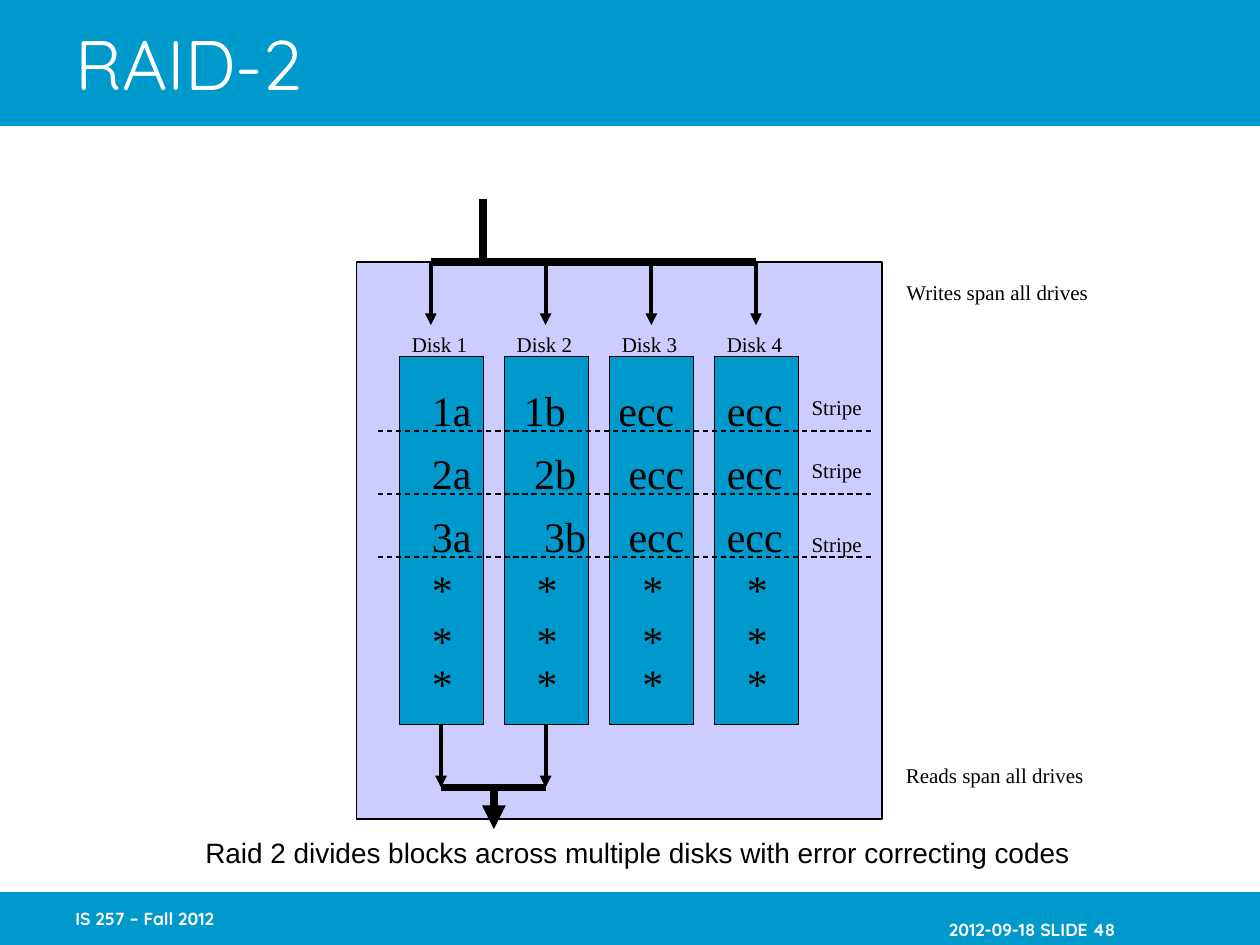
from pptx import Presentation
from pptx.dml.color import RGBColor
from pptx.enum.dml import MSO_LINE
from pptx.enum.shapes import MSO_CONNECTOR, MSO_SHAPE
from pptx.enum.text import MSO_ANCHOR, PP_ALIGN
from pptx.oxml.ns import qn
from pptx.util import Inches, Pt
from lxml.etree import SubElement

BLUE, LILAC, BLACK, WHITE = "0099CC", "CCCCFF", "000000", "FFFFFF"
SERIF, BRAND_FONT = "Times New Roman", "Quicksand"
DISK_LEFT, DISK_PITCH = 3.17, 2.5 / 3
DATA_ROWS = [
    (3, ["1a", "1b", "ecc", "ecc"], [0.73, 1.48, 2.34]),
    (3.5, ["2a", "2b", "ecc", "ecc"], [0.81, 1.56, 2.34]),
    (4, ["3a", "3b", "ecc", "ecc"], [0.89, 1.56, 2.34]),
] + [(top, ["*"] * 4, [0.83, 1.67, 2.5]) for top in (4.42, 4.83, 5.17)]


def color(value):
    """Turn a hex string into a colour."""
    return RGBColor.from_string(value)


def style_text(frame, size, font, shade, bold=False):
    """Format every run of a text frame."""
    for para in frame.paragraphs:
        for span in para.runs:
            span.font.size = Pt(size)
            span.font.name = font
            span.font.bold = bold
            span.font.color.rgb = color(shade)


def add_block(page, left, top, width, height, fill, outlined=True):
    """Add a filled rectangle, with a thin black outline if wanted."""
    block = page.shapes.add_shape(
        MSO_SHAPE.RECTANGLE, Inches(left), Inches(top), Inches(width), Inches(height))
    block.shadow.inherit = False
    block.fill.solid()
    block.fill.fore_color.rgb = color(fill)
    if outlined:
        block.line.color.rgb = color(BLACK)
        block.line.width = Pt(0.75)
    else:
        block.line.fill.background()


def add_line(page, start, end, width, arrow=False, dashed=False):
    """Add a straight black line, optionally dashed or with an arrowhead."""
    line = page.shapes.add_connector(
        MSO_CONNECTOR.STRAIGHT, *(Inches(value) for value in start + end))
    line.line.color.rgb = color(BLACK)
    line.line.width = Pt(width)
    if dashed:
        line.line.dash_style = MSO_LINE.DASH
    if arrow:
        SubElement(line.line._get_or_add_ln(), qn("a:tailEnd"), type="triangle")
    SubElement(line._element.spPr, qn("a:effectLst"))


def add_text(page, left, top, width, height, text, size=12, font=SERIF,
             shade=BLACK, align=PP_ALIGN.LEFT, bold=False, wrap=False):
    """Add a one-line text box and return its text frame."""
    box = page.shapes.add_textbox(
        Inches(left), Inches(top), Inches(width), Inches(height))
    frame = box.text_frame
    frame.word_wrap = wrap
    frame.text = text
    frame.paragraphs[0].alignment = align
    style_text(frame, size, font, shade, bold)
    return frame


def add_data_row(page, top, cells, stops):
    """Add one row of block names, spread over the disks by tab stops."""
    frame = add_text(page, 3.33, top, 2.99, 0.5, "\t".join(cells), 24, wrap=True)
    tabs = SubElement(frame.paragraphs[0]._p.get_or_add_pPr(), qn("a:tabLst"))
    for stop in stops:
        SubElement(tabs, qn("a:tab"), pos=str(Inches(stop)), algn="l")


def add_footer(page, left, text, align, top_inset=0.05, right_inset=0):
    """Add a bold white text on the bottom band."""
    frame = add_text(page, left, 7.08, 2.08, 0.42, text, 10, BRAND_FONT,
                     WHITE, align, bold=True, wrap=True)
    frame.vertical_anchor = MSO_ANCHOR.MIDDLE
    frame.margin_top = Inches(top_inset)
    frame.margin_right = Inches(right_inset)


def add_title(page, text):
    """Fill the title placeholder and bring it in front of the top band."""
    title = page.shapes.title
    title.left, title.top, title.width, title.height = (
        Inches(value) for value in (0.5, 0, 8.5, 1))
    frame = title.text_frame
    frame.text = text
    frame.vertical_anchor = MSO_ANCHOR.MIDDLE
    frame.paragraphs[0].alignment = PP_ALIGN.LEFT
    style_text(frame, 40, BRAND_FONT, WHITE)
    title._element.getparent().append(title._element)


def add_disks(page):
    """Add the array with its four labelled disks and their contents."""
    add_block(page, 2.83, 2.08, 4.17, 4.42, LILAC)
    for index in range(4):
        left = DISK_LEFT + index * DISK_PITCH
        add_block(page, left, 2.83, 0.67, 2.92, BLUE)
        add_text(page, left, 2.58, 0.64, 0.3, f"Disk {index + 1}")
    for top, cells, stops in DATA_ROWS:
        add_data_row(page, top, cells, stops)
    for label_top, line_y in ((3.08, 3.42), (3.58, 3.92), (4.17, 4.42)):
        add_text(page, 6.34, label_top, 0.6, 0.3, "Stripe", align=PP_ALIGN.CENTER)
        add_line(page, (3, line_y), (6.92, line_y), 0.75, dashed=True)


def add_flows(page):
    """Add the write arrows above the disks and the read arrows below."""
    for x in (3.42, 4.33, 5.17, 6):
        add_line(page, (x, 2.08), (x, 2.58), 2.25, arrow=True)
    for x in (3.5, 4.33):
        add_line(page, (x, 5.75), (x, 6.25), 2.25, arrow=True)
    add_line(page, (3.42, 2.08), (6, 2.08), 4.5)
    add_line(page, (3.83, 1.58), (3.83, 2.08), 4.5)
    add_line(page, (3.5, 6.25), (4.33, 6.25), 4.5)
    add_line(page, (3.92, 6.25), (3.92, 6.58), 4.5, arrow=True)


def main():
    """Build the slide and save it."""
    deck = Presentation()
    deck.slide_width, deck.slide_height = Inches(10), Inches(7.5)
    page = deck.slides.add_slide(deck.slide_layouts[5])
    add_block(page, 0, 0, 10, 1, BLUE, outlined=False)
    add_block(page, 0, 7.08, 10, 0.42, BLUE, outlined=False)
    add_footer(page, 7.42, "2012-09-18 SLIDE 48", PP_ALIGN.RIGHT, 0.23, 0.65)
    add_footer(page, 0.5, "IS 257 – Fall 2012", PP_ALIGN.LEFT)
    add_title(page, "RAID-2")
    add_disks(page)
    add_flows(page)
    add_text(page, 7.09, 2.17, 1.65, 0.3, "Writes span all drives", align=PP_ALIGN.CENTER)
    add_text(page, 7.09, 6, 1.61, 0.3, "Reads span all drives", align=PP_ALIGN.CENTER)
    add_text(page, 1.52, 6.58, 7.08, 0.37,
             "Raid 2 divides blocks across multiple disks with error correcting codes",
             16, "Arial", align=PP_ALIGN.CENTER)
    deck.save("out.pptx")


if __name__ == "__main__":
    main()
